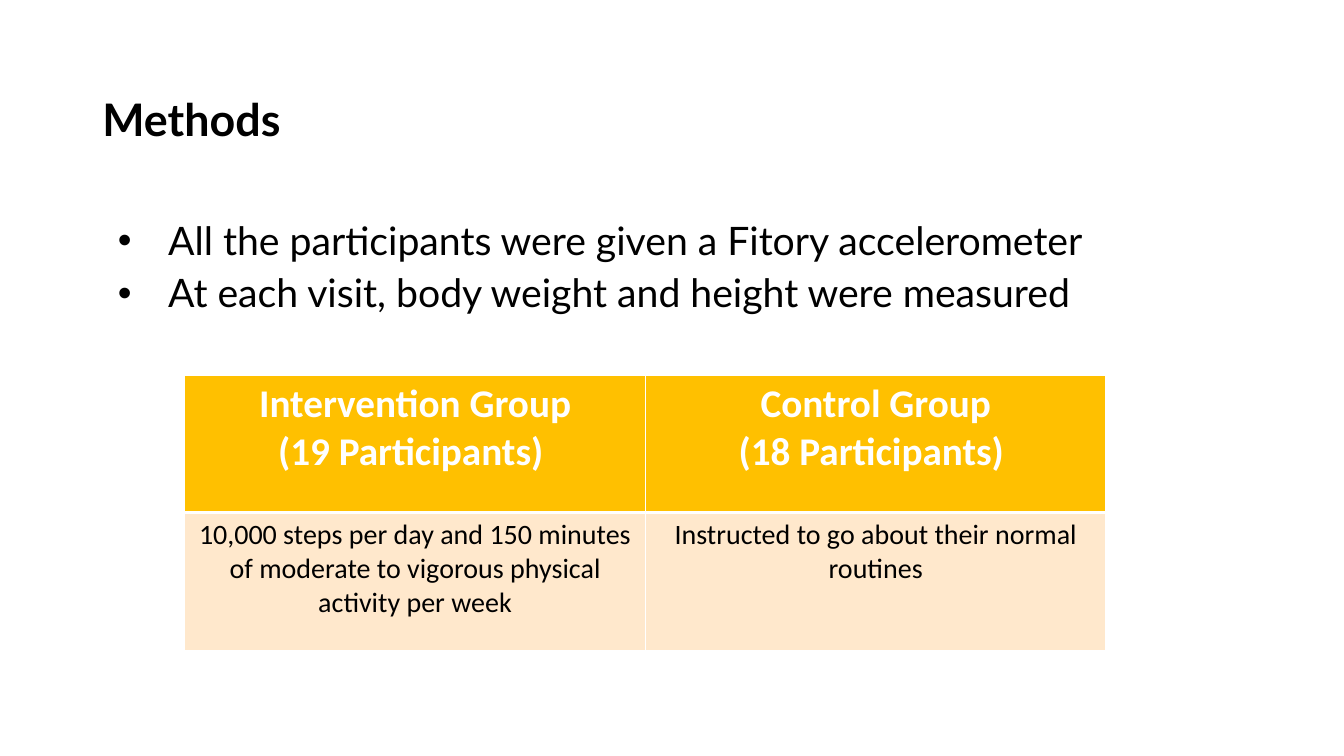
"""Build the Methods slide: a heading, two bullets and a table of the study groups."""
from typing import NamedTuple

from lxml.etree import SubElement
from pptx import Presentation
from pptx.dml.color import RGBColor as RGB
from pptx.enum.text import MSO_ANCHOR as ANCHOR, PP_ALIGN as ALIGN
from pptx.oxml.ns import qn
from pptx.util import Emu, Inches, Pt

CELL = Inches(1 / 12)
COLUMNS, ROWS = 160, 90
BLACK, WHITE, AMBER, PEACH = "000000", "FFFFFF", "FFC000", "FFE8CC"


class Box(NamedTuple):
    left: float
    top: float
    width: float
    height: float


class Style(NamedTuple):
    font: str
    size: float
    color: str = BLACK
    bold: bool = False


class TableRow(NamedTuple):
    texts: tuple[str, ...]
    style: Style
    fill: str
    borders: dict[str, float]


TITLE_BOX = Box(11, 3.36, 128.52, 14.64)
BULLETS_BOX = Box(12.84, 25.75, 137.88, 12.5)
TABLE_BOX = Box(22, 44.64, 109.68, 32.76)

BULLETS = (
    "All the participants were given a Fitory accelerometer",
    "At each visit, body weight and height were measured",
)
GROUPS = (
    TableRow(
        ("Intervention Group\n(19 Participants) ", "Control Group\n(18 Participants) "),
        Style("Calibri", 28, WHITE, True), AMBER, {"L": 1, "R": 1, "T": 1, "B": 3},
    ),
    TableRow(
        ("10,000 steps per day and 150 minutes of moderate to vigorous physical activity per week",
         "Instructed to go about their normal routines"),
        Style("Calibri", 20), PEACH, {"L": 1, "R": 1, "T": 3, "B": 1},
    ),
)


def rgb(color: str) -> RGB:
    return RGB.from_string(color)


def place(box: Box) -> list[Emu]:
    return [Emu(round(n * CELL)) for n in box]


def format_text(tf, style: Style) -> None:
    for p in tf.paragraphs:
        for r in p.runs:
            r.font.name = style.font
            r.font.size = Pt(style.size)
            r.font.bold = style.bold
            r.font.color.rgb = rgb(style.color)


def add_text(slide, box: Box, text: str, style: Style, anchor: ANCHOR):
    tf = slide.shapes.add_textbox(*place(box)).text_frame
    tf.word_wrap = True
    tf.vertical_anchor = anchor
    tf.text = text
    for p in tf.paragraphs:
        p.line_spacing = 0.9
    format_text(tf, style)
    return tf


def add_bullet(p, indent: Emu) -> None:
    pPr = p._p.get_or_add_pPr()
    pPr.set("marL", str(indent))
    pPr.set("indent", str(-indent))
    SubElement(pPr, qn("a:buFont"), typeface="Arial")
    SubElement(pPr, qn("a:buChar"), char="•")


def set_borders(cell, borders: dict[str, float]) -> None:
    tcPr = cell._tc.get_or_add_tcPr()
    for side, width in borders.items():
        ln = SubElement(tcPr, qn(f"a:ln{side}"), w=str(Pt(width)))
        SubElement(SubElement(ln, qn("a:solidFill")), qn("a:srgbClr"), val=WHITE)


def add_groups(slide, box: Box, rows: tuple[TableRow, ...]) -> None:
    table = slide.shapes.add_table(len(rows), len(rows[0].texts), *place(box)).table
    for i, row in enumerate(rows):
        for j, text in enumerate(row.texts):
            cell = table.cell(i, j)
            cell.text_frame.text = text
            for p in cell.text_frame.paragraphs:
                p.alignment = ALIGN.CENTER
            format_text(cell.text_frame, row.style)
            set_borders(cell, row.borders)
            cell.fill.solid()
            cell.fill.fore_color.rgb = rgb(row.fill)


def main() -> None:
    prs = Presentation()
    prs.slide_width, prs.slide_height = COLUMNS * CELL, ROWS * CELL
    slide = prs.slides.add_slide(prs.slide_layouts[6])
    add_text(slide, TITLE_BOX, "Methods", Style("Lato", 32, bold=True), ANCHOR.BOTTOM)
    tf = add_text(slide, BULLETS_BOX, "\n".join(BULLETS), Style("Lato", 28), ANCHOR.TOP)
    for i, p in enumerate(tf.paragraphs):
        p.space_before = Pt(7.5 if i else 0)
        add_bullet(p, Inches(0.5))
    add_groups(slide, TABLE_BOX, GROUPS)
    prs.save("out.pptx")


if __name__ == "__main__":
    main()
